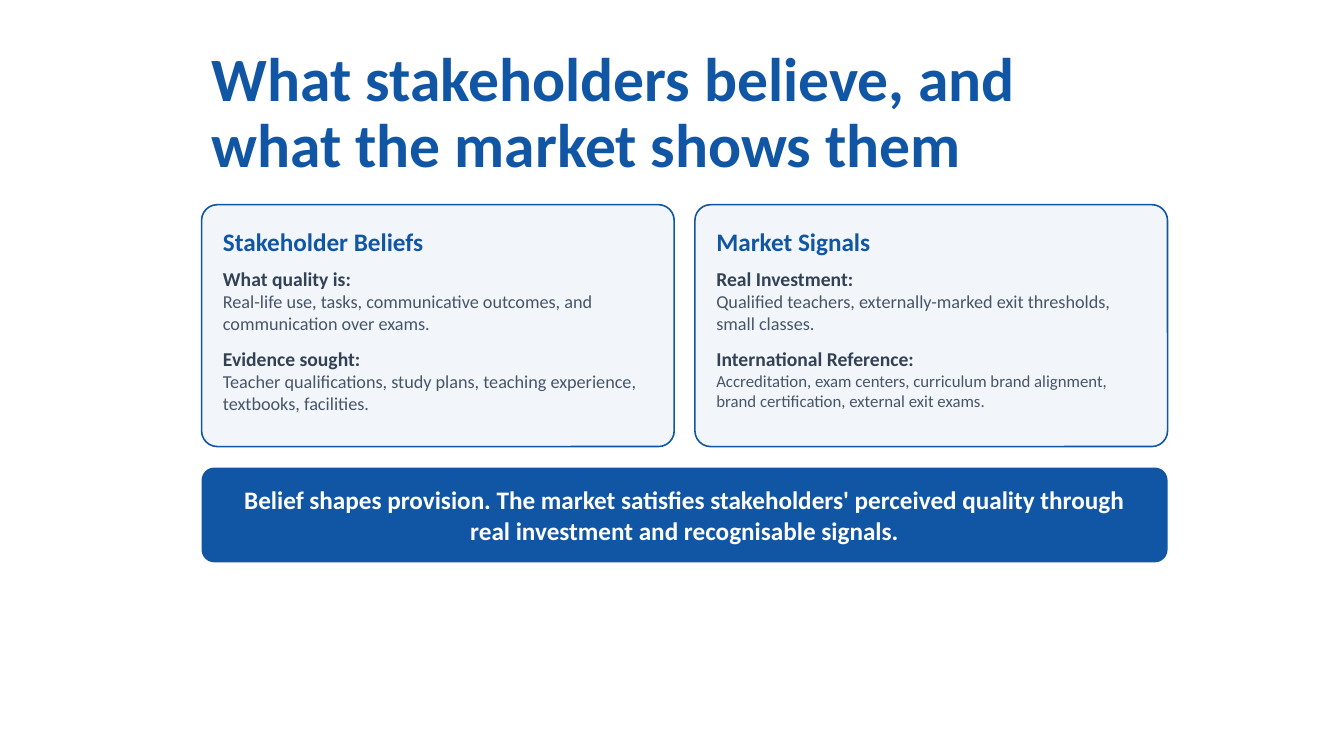
from lxml import etree
from pptx import Presentation
from pptx.dml.color import RGBColor
from pptx.enum.shapes import MSO_SHAPE
from pptx.enum.text import MSO_ANCHOR, PP_ALIGN
from pptx.oxml.ns import qn
from pptx.util import Pt

ROUNDED = MSO_SHAPE.ROUNDED_RECTANGLE
TOP, MIDDLE = MSO_ANCHOR.TOP, MSO_ANCHOR.MIDDLE
LEFT, CENTER = PP_ALIGN.LEFT, PP_ALIGN.CENTER

COLORS = {"blue": "1056A4", "dark": "334155", "slate": "475569", "white": "FFFFFF"}
X, GAP, CARD_W, CARD_Y, CARD_H = 144, 14.8, 337.6, 146.2, 172.8
BANNER_Y, BANNER_H = 334, 67.7

CARDS = [
    ("Stakeholder Beliefs", [
        ("What quality is:", "Real-life use, tasks, communicative outcomes, and communication over exams.", 13),
        ("Evidence sought:", "Teacher qualifications, study plans, teaching experience, textbooks, facilities.", 13),
    ]),
    ("Market Signals", [
        ("Real Investment:", "Qualified teachers, externally-marked exit thresholds, small classes.", 13),
        ("International Reference:", "Accreditation, exam centers, curriculum brand alignment, brand certification, external exit exams.", 12),
    ]),
]

prs = Presentation()
prs.slide_width, prs.slide_height = Pt(960), Pt(540)
s = prs.slides.add_slide(prs.slide_layouts[5])


def write(p, text, size, color, bold=True, before=0, align=LEFT):
    p.alignment = align
    p.space_before = Pt(before)
    r = p.add_run()
    r.text = text
    for name, value in {"name": "Calibri", "size": Pt(size), "bold": bold}.items():
        setattr(r.font, name, value)
    r.font.color.rgb = RGBColor.from_string(COLORS[color])


def add_panel(x, y, w, h, radius, anchor, inset_x, inset_y):
    sp = s.shapes.add_shape(ROUNDED, Pt(x), Pt(y), Pt(w), Pt(h))
    sp.adjustments[0] = radius
    sp.shadow.inherit = False
    sp.fill.solid()
    sp.fill.fore_color.rgb = RGBColor.from_string(COLORS["blue"])
    tf = sp.text_frame
    frame = {"word_wrap": True, "vertical_anchor": anchor,
             "margin_left": Pt(inset_x), "margin_right": Pt(inset_x),
             "margin_top": Pt(inset_y), "margin_bottom": Pt(inset_y)}
    for name, value in frame.items():
        setattr(tf, name, value)
    return sp


title = s.shapes.title
place = {"left": 144, "top": 28.8, "width": 679.7, "height": 105.8}
for name, value in place.items():
    setattr(title, name, Pt(value))
tf = title.text_frame
tf.word_wrap = True
tf.vertical_anchor = MIDDLE
p = tf.paragraphs[0]
p.line_spacing = 0.9
write(p, "What stakeholders believe, and what the market shows them", 44, "blue")

for i, (heading, points) in enumerate(CARDS):
    sp = add_panel(X + i * (CARD_W + GAP), CARD_Y, CARD_W, CARD_H, 0.065, TOP, 12, 12)
    tint = sp.fill._xPr.find(qn("a:solidFill"))[0]
    etree.SubElement(tint, qn("a:alpha"), val="5000")
    sp.line.color.rgb = RGBColor.from_string(COLORS["blue"])
    sp.line.width = Pt(1.13)
    tf = sp.text_frame
    write(tf.paragraphs[0], heading, 18, "blue")
    for (label, detail, size), before in zip(points, (7.5, 9)):
        write(tf.add_paragraph(), label, 14, "dark", before=before)
        write(tf.add_paragraph(), detail, size, "slate", bold=False)

banner = add_panel(X, BANNER_Y, 2 * CARD_W + GAP, BANNER_H, 0.133, MIDDLE, 27.6, 0)
banner.line.fill.background()
write(banner.text_frame.paragraphs[0],
      "Belief shapes provision. The market satisfies stakeholders' perceived quality "
      "through real investment and recognisable signals.", 18, "white", align=CENTER)

prs.save("out.pptx")
